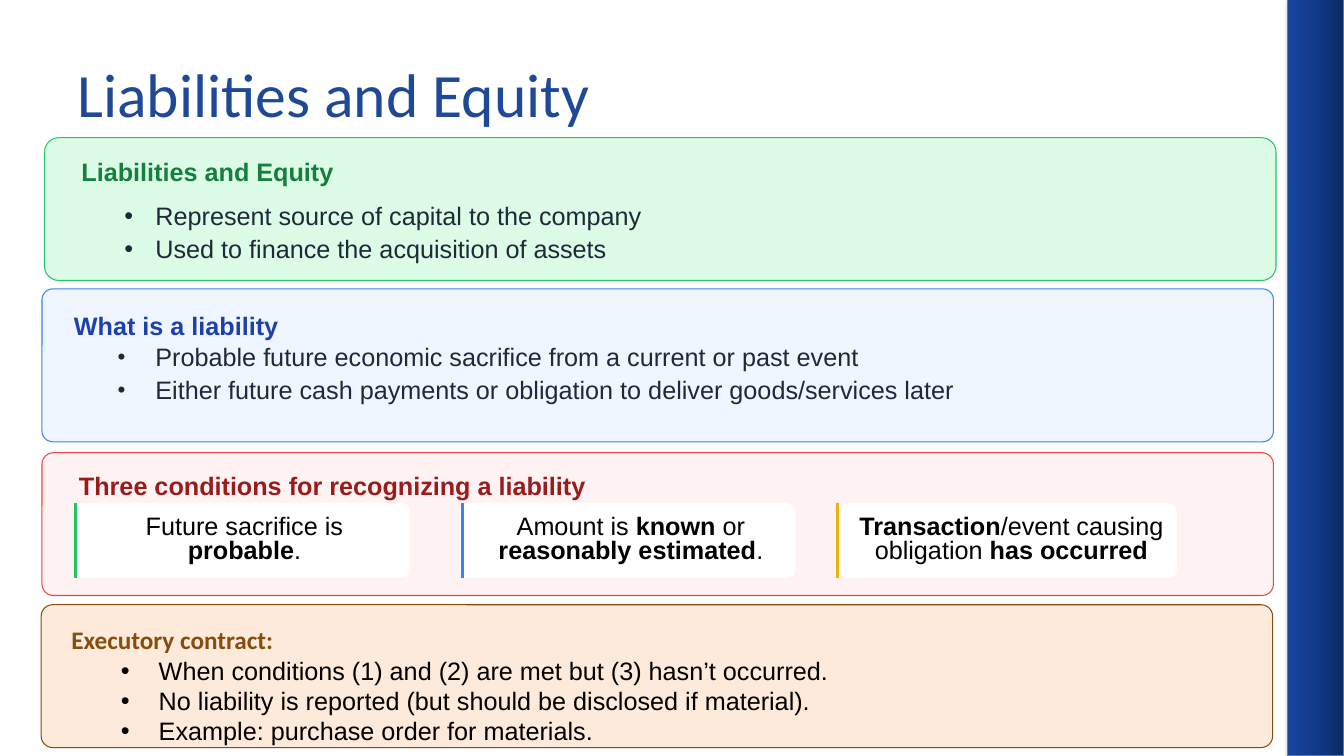
from copy import deepcopy

from lxml import etree
from pptx import Presentation
from pptx import util as u
from pptx.dml.color import RGBColor
from pptx.enum import shapes, text
from pptx.oxml import ns

COLUMNS, ROWS = 160, 90
PANEL_WIDTH = 146.6

WHITE = RGBColor(0xFF, 0xFF, 0xFF)
BLACK = RGBColor(0x00, 0x00, 0x00)
INK = RGBColor(0x1F, 0x29, 0x37)
TITLE_BLUE = RGBColor(0x1F, 0x48, 0x99)
BAND_STOPS = [RGBColor(0x0D, 0x29, 0x60), RGBColor(0x12, 0x3A, 0x89), RGBColor(0x16, 0x45, 0xA2)]
BAND_LINE = RGBColor(0x4B, 0x7E, 0xBC)
GREEN = RGBColor(0x22, 0xC5, 0x5E)
GREEN_PALE = RGBColor(0xDC, 0xFC, 0xE7)
GREEN_DARK = RGBColor(0x15, 0x80, 0x3D)
BLUE = RGBColor(0x3B, 0x82, 0xF6)
BLUE_PALE = RGBColor(0xEF, 0xF6, 0xFF)
BLUE_DARK = RGBColor(0x1E, 0x40, 0xAF)
RED = RGBColor(0xEF, 0x44, 0x44)
RED_PALE = RGBColor(0xFE, 0xF2, 0xF2)
RED_DARK = RGBColor(0x99, 0x1B, 0x1B)
YELLOW = RGBColor(0xEA, 0xB3, 0x08)
BROWN = RGBColor(0x85, 0x4D, 0x0E)
ORANGE_PALE = RGBColor(0xFD, 0xEA, 0xDA)


def add_xml(parent, tag, **attributes):
    return etree.SubElement(parent, ns.qn(tag), attributes)


def write(frame, lines, size=18, font="Arial", color=BLACK, bold=False, align=text.PP_ALIGN.LEFT,
          spacing=None, after=0, indent=None, bullet_percent=100):
    """Write one paragraph per line; ** switches bold on and off."""
    for index, line in enumerate(lines):
        paragraph = frame.add_paragraph() if index else frame.paragraphs[0]
        paragraph.alignment = align
        paragraph.space_after = u.Pt(after)
        if spacing:
            paragraph.line_spacing = u.Pt(spacing)
        if indent:
            properties = paragraph._p.get_or_add_pPr()
            properties.set("marL", str(indent))
            properties.set("indent", str(-indent))
            add_xml(properties, "a:buSzPct", val=str(bullet_percent * 1000))
            add_xml(properties, "a:buFont", typeface="Arial")
            add_xml(properties, "a:buChar", char="•")
        for part, words in enumerate(line.split("**")):
            if words:
                run = paragraph.add_run()
                run.text = words
                run.font.size, run.font.name = u.Pt(size), font
                run.font.bold = bold or part % 2 == 1
                run.font.color.rgb = color


class SlideBuilder:
    def __init__(self, presentation):
        self.column = presentation.slide_width / COLUMNS
        self.row = presentation.slide_height / ROWS
        self.slide = presentation.slides.add_slide(presentation.slide_layouts[5])

    def place(self, left, top, width, height):
        return (round(left * self.column), round(top * self.row),
                round(width * self.column), round(height * self.row))

    def title(self, words, *area, **style):
        title = self.slide.shapes.title
        title.left, title.top, title.width, title.height = self.place(*area)
        title.text_frame.vertical_anchor = text.MSO_ANCHOR.MIDDLE
        write(title.text_frame, [words], **style)

    def box(self, *area, kind=shapes.MSO_SHAPE.ROUNDED_RECTANGLE, fill=WHITE, line=None, corner=None):
        shape = self.slide.shapes.add_shape(kind, *self.place(*area))
        shape.shadow.inherit = False
        shape.fill.solid()
        shape.fill.fore_color.rgb = fill
        if corner:
            shape.adjustments[0] = corner
        if line:
            shape.line.color.rgb = line
            shape.line.width = u.Pt(0.75)
        else:
            shape.line.fill.background()
        return shape

    def band(self, *area):
        band = self.box(*area, kind=shapes.MSO_SHAPE.RECTANGLE, line=BAND_LINE)
        band.fill.gradient()
        band.fill.gradient_angle = 180
        properties = band._element.spPr
        stops = properties.find(".//" + ns.qn("a:gsLst"))
        stops.insert(1, deepcopy(stops[0]))
        for index, (stop, color) in enumerate(zip(band.fill.gradient_stops, BAND_STOPS)):
            stop.position = index / 2
            stop.color.rgb = color
        shadow = add_xml(properties.find(ns.qn("a:effectLst")), "a:outerShdw", blurRad="39400",
                         dist="22900", dir="5400000", rotWithShape="0")
        add_xml(add_xml(shadow, "a:srgbClr", val="000000"), "a:alpha", val="35000")

    def text(self, lines, *area, indent=0, **style):
        frame = self.slide.shapes.add_textbox(*self.place(*area)).text_frame
        frame.word_wrap = True
        frame.margin_left = frame.margin_top = frame.margin_right = frame.margin_bottom = 0
        write(frame, lines, indent=round(indent * self.column), **style)

    def bar(self, left, top, height, color):
        x, y, _, length = self.place(left, top, 0, height)
        bar = self.slide.shapes.add_connector(shapes.MSO_CONNECTOR.STRAIGHT, x, y, x, y + length)
        bar.line.color.rgb = color
        bar.line.width = u.Pt(2.25)
        add_xml(bar._element.spPr, "a:effectLst")

    def card(self, left, bar_left, text_left, color, words):
        self.box(left, 59.9, 40, 8.9, corner=0.11)
        self.bar(bar_left, 59.9, 8.9, color)
        self.text([words], text_left, 61.6, 36.4, 5.6, align=text.PP_ALIGN.CENTER, spacing=16.8)


def main():
    presentation = Presentation()
    presentation.slide_width, presentation.slide_height = u.Inches(13.33), u.Inches(7.5)
    builder = SlideBuilder(presentation)

    # Side band and title
    builder.band(153.3, 0, 6.7, 90)
    builder.title("Liabilities and Equity", 8, 3.6, 144, 15, size=44, font="Calibri", color=TITLE_BLUE)

    # Panels: left, top, height, corner, fill, line
    for left, top, height, corner, fill, line in [
        (5.3, 16.4, 17, 0.1, GREEN_PALE, GREEN),
        (5, 34.4, 18.2, 0.07, BLUE_PALE, BLUE),
        (5, 53.9, 17, 0.08, RED_PALE, RED),
        (4.9, 72, 17, 0.08, ORANGE_PALE, BROWN),
    ]:
        builder.box(left, top, PANEL_WIDTH, height, corner=corner, fill=fill, line=line)

    # Panel headings: words, left, top, line spacing, color, font
    for words, left, top, spacing, color, font in [
        ("Liabilities and Equity", 9.7, 18, 25.2, GREEN_DARK, "Arial"),
        ("What is a liability", 8.8, 36.6, 23.8, BLUE_DARK, "Arial"),
        ("Three conditions for recognizing a liability", 9.4, 55.8, 22.4, RED_DARK, "Arial"),
        ("Executory contract:", 8.5, 74.4, 21, BROWN, "Calibri"),
    ]:
        builder.text([words], left, top, 143.5, 4, spacing=spacing, color=color, font=font, bold=True)

    # Bullet lists
    builder.text(["Represent source of capital to the company",
                  "Used to finance the acquisition of assets"],
                 14.8, 24.2, 89.8, 8, indent=3.7, color=INK, spacing=19.6, after=4)
    builder.text(["Probable future economic sacrifice from a current or past event",
                  "Either future cash payments or obligation to deliver goods/services later"],
                 14, 41, 110.5, 9.4, indent=4.5, color=INK, spacing=19.6, after=4, bullet_percent=89)
    builder.text(["When conditions (1) and (2) are met but (3) hasn’t occurred.",
                  "No liability is reported (but should be disclosed if material).",
                  "Example: purchase order for materials."],
                 14.4, 78, 101.9, 10.9, indent=4.5)

    # Condition cards
    builder.card(8.8, 9, 10.9, GREEN, "Future sacrifice is **probable**.")
    builder.card(54.7, 55.1, 56.9, BLUE, "Amount is **known** or **reasonably estimated**.")
    builder.card(100.1, 99.7, 102.2, YELLOW,
                 "**Transaction**/event causing obligation **has occurred**")

    presentation.save("out.pptx")


if __name__ == "__main__":
    main()
